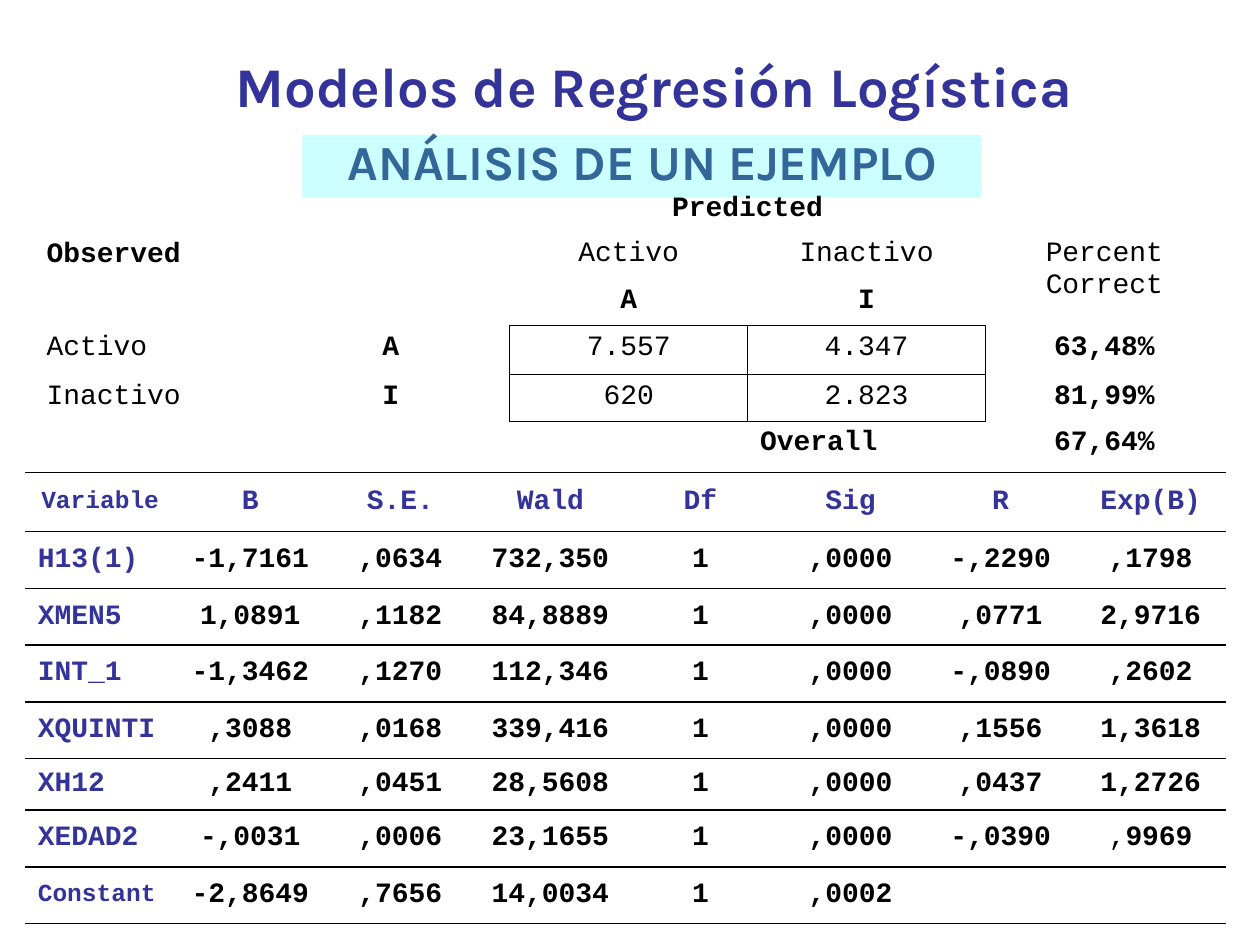
from lxml.etree import SubElement
from pptx import Presentation
from pptx.dml.color import RGBColor
from pptx.enum.shapes import MSO_SHAPE as SHAPE
from pptx.enum.text import MSO_ANCHOR as ANCHOR, MSO_AUTO_SIZE as AUTO, PP_ALIGN as ALIGN
from pptx.oxml.ns import qn
from pptx.util import Inches, Pt

BLACK, INDIGO, STEEL, AQUA = "000000", "333399", "336699", "CCFFFF"
MONO, SANS = "Courier New", "Karla"
NO_STYLE = "{2D5ABB26-0587-4C30-8999-92F81FD0307C}"

# Classification table: (row, column): text
BOLD_LABELS = {(0, 0): "Observed", (0, 2): "Predicted", (2, 2): "A", (2, 3): "I",
               (3, 1): "A", (4, 1): "I", (3, 4): "63,48%", (4, 4): "81,99%",
               (5, 3): "Overall", (5, 4): "67,64%"}
PLAIN_LABELS = {(1, 2): "Activo", (1, 3): "Inactivo", (1, 4): "Percent Correct",
                (3, 0): "Activo", (4, 0): "Inactivo", (3, 2): "7.557",
                (3, 3): "4.347", (4, 2): "620", (4, 3): "2.823"}
MERGES = [((0, 0), (2, 0)), ((0, 1), (2, 1)), ((0, 2), (0, 3)),
          ((1, 4), (2, 4)), ((5, 0), (5, 2))]
BOXED = {(r, c) for r in (3, 4) for c in (2, 3)}
NEIGHBOURS = {"L": (0, -1), "R": (0, 1), "T": (-1, 0), "B": (1, 0)}

COEFFICIENTS = [
    ("Variable", "B", "S.E.", "Wald", "Df", "Sig", "R", "Exp(B)"),
    ("H13(1)", "-1,7161", ",0634", "732,350", "1", ",0000", "-,2290", ",1798"),
    ("XMEN5", "1,0891", ",1182", "84,8889", "1", ",0000", ",0771", "2,9716"),
    ("INT_1", "-1,3462", ",1270", "112,346", "1", ",0000", "-,0890", ",2602"),
    ("XQUINTI", ",3088", ",0168", "339,416", "1", ",0000", ",1556", "1,3618"),
    ("XH12", ",2411", ",0451", "28,5608", "1", ",0000", ",0437", "1,2726"),
    ("XEDAD2", "-,0031", ",0006", "23,1655", "1", ",0000", "-,0390", ",9969"),
    ("Constant", "-2,8649", ",7656", "14,0034", "1", ",0002", "", ""),
]


def rgb(color):
    return RGBColor.from_string(color)


def write(tf, text, size=16, font=MONO, color=BLACK, bold=True, align=ALIGN.CENTER):
    """Append a formatted run to the first paragraph."""
    p = tf.paragraphs[0]
    p.alignment = align
    r = p.add_run()
    r.text = text
    r.font.size, r.font.name, r.font.bold = Pt(size), font, bold
    r.font.color.rgb = rgb(color)
    return p


def place(sp, left, top, width, height):
    sp.left, sp.top = Inches(left), Inches(top)
    sp.width, sp.height = Inches(width), Inches(height)


def add_table(slide, left, top, width, heights, columns):
    """Add an unstyled table with equal columns."""
    frame = slide.shapes.add_table(len(heights), columns, Inches(left), Inches(top),
                                   Inches(width), Inches(sum(heights)))
    table = frame.table
    table.first_row = table.horz_banding = False
    table._tbl.tblPr.find(qn("a:tableStyleId")).text = NO_STYLE
    for row, height in zip(table.rows, heights):
        row.height = Inches(height)
    for column in table.columns:
        column.width = Inches(width / columns)
    for cell in table.iter_cells():
        end = cell.text_frame.paragraphs[0]._p.get_or_add_endParaRPr()
        end.set("sz", "1600")
    return table


def set_borders(cell, sides):
    """Draw 1 pt black lines on the given sides, in L, R, T, B order."""
    tc_pr = cell._tc.get_or_add_tcPr()
    for side in sides:
        ln = SubElement(tc_pr, qn(f"a:ln{side}"), w=str(Pt(1)))
        fill = SubElement(ln, qn("a:solidFill"))
        SubElement(fill, qn("a:srgbClr"), val=BLACK)
    cell.fill.background()


def add_headings(slide):
    title = slide.shapes.title
    place(title, 1.77, 0.36, 7.22, 0.63)
    tf = title.text_frame
    tf.word_wrap, tf.auto_size, tf.vertical_anchor = False, AUTO.NONE, ANCHOR.TOP
    write(tf, "Modelos de Regresión Logística", 32, SANS, INDIGO, align=ALIGN.LEFT)

    banner = slide.shapes.add_shape(SHAPE.RECTANGLE, 0, 0, 0, 0)
    place(banner, 2.4, 1.07, 5.39, 0.5)
    banner.shadow.inherit = False
    banner.fill.solid()
    banner.fill.fore_color.rgb = rgb(AQUA)
    banner.line.fill.background()
    tf = banner.text_frame
    tf.word_wrap, tf.vertical_anchor = False, ANCHOR.TOP
    write(tf, "ANÁLISIS DE UN EJEMPLO", 28, SANS, STEEL).line_spacing = 0.85


def add_classification(slide):
    table = add_table(slide, 0.27, 1.47, 9.44, [0.37, 0.37, 0.37, 0.39, 0.37, 0.37], 5)
    for start, end in MERGES:
        table.cell(*start).merge(table.cell(*end))
    for labels, bold in ((BOLD_LABELS, True), (PLAIN_LABELS, False)):
        for (row, col), text in labels.items():
            left = col == 0 or text == "Overall"
            cell = table.cell(row, col)
            write(cell.text_frame, text, bold=bold,
                  align=ALIGN.LEFT if left else ALIGN.CENTER)
            if row == 0:
                cell.vertical_anchor = ANCHOR.MIDDLE
    # A side is drawn when the cell on either side of it is boxed
    for row in range(6):
        for col in range(5):
            sides = [s for s, (dr, dc) in NEIGHBOURS.items()
                     if BOXED & {(row, col), (row + dr, col + dc)}]
            set_borders(table.cell(row, col), sides)


def add_coefficients(slide):
    heights = [0.47, 0.45, 0.45, 0.45, 0.45, 0.41, 0.45, 0.45]
    table = add_table(slide, 0.2, 3.75, 9.53, heights, 8)
    for row, values in enumerate(COEFFICIENTS):
        for col, text in enumerate(values):
            cell = table.cell(row, col)
            cell.vertical_anchor = ANCHOR.MIDDLE
            set_borders(cell, "TB")
            tf = cell.text_frame
            if text == ",9969":  # its comma is not bold
                write(tf, ",", bold=False)
                text = text[1:]
            if text:
                write(tf, text, size=14 if text in ("Variable", "Constant") else 16,
                      color=INDIGO if row == 0 or col == 0 else BLACK,
                      align=ALIGN.LEFT if col == 0 and row else ALIGN.CENTER)


def main():
    prs = Presentation()
    prs.slide_width, prs.slide_height = Inches(10), Inches(7.5)
    slide = prs.slides.add_slide(prs.slide_layouts[5])
    add_headings(slide)
    add_classification(slide)
    add_coefficients(slide)
    prs.save("out.pptx")


if __name__ == "__main__":
    main()
